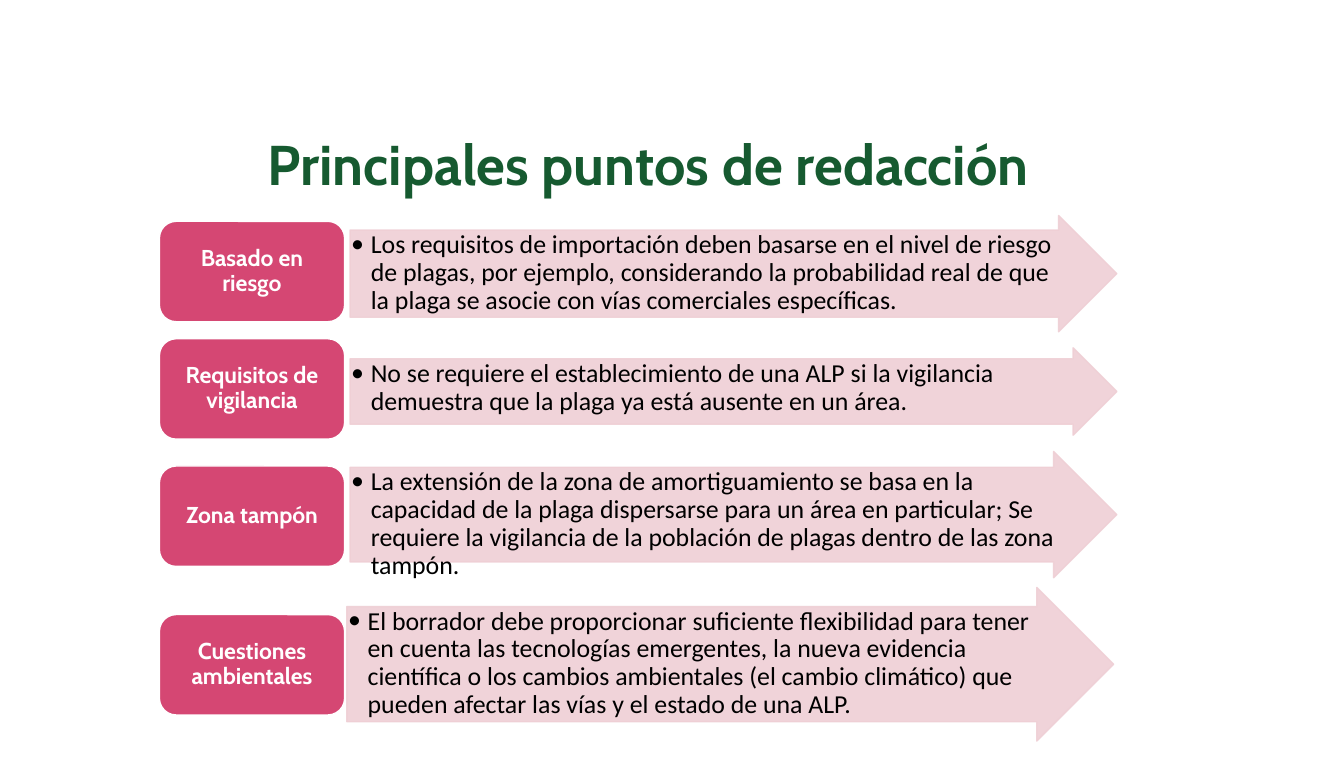
from dataclasses import dataclass

from lxml import etree
from pptx import Presentation
from pptx.dml.color import RGBColor
from pptx.enum import shapes, text
from pptx.oxml import ns
from pptx.util import Pt

GREEN, PINK, PALE_PINK = "165A30", "D54773", "EFCFD5"
WHITE, BLACK = "FFFFFF", "000000"
LABEL_LEFT, LABEL_WIDTH, LABEL_HEIGHT = 111, 129, 70
ARROW_WIDTH = 534
INDENT = 13.7


@dataclass
class DraftingPoint:
    label: str
    label_top: float
    detail: str
    arrow_left: float
    arrow_top: float
    arrow_height: float


POINTS = [
    DraftingPoint(
        "Basado en riesgo", 154.2,
        "Los requisitos de importación deben basarse en el nivel de riesgo de plagas, "
        "por ejemplo, considerando la probabilidad real de que la plaga se asocie con "
        "vías comerciales específicas.",
        243.8, 150.2, 81),
    DraftingPoint(
        "Requisitos de vigilancia", 236,
        "No se requiere el establecimiento de una ALP si la vigilancia demuestra que "
        "la plaga ya está ausente en un área.",
        243.8, 242.4, 60.8),
    DraftingPoint(
        "Zona tampón", 324.7,
        "La extensión de la zona de amortiguamiento se basa en la capacidad de la plaga "
        "dispersarse para un área en particular; Se requiere la vigilancia de la "
        "población de plagas dentro de las zona tampón.",
        243.8, 314.6, 88),
    DraftingPoint(
        "Cuestiones ambientales", 428.2,
        "El borrador debe proporcionar suficiente flexibilidad para tener en cuenta las "
        "tecnologías emergentes, la nueva evidencia científica o los cambios ambientales "
        "(el cambio climático) que pueden afectar las vías y el estado de una ALP.",
        241.6, 409.3, 107),
]


def set_color(color_format, value: str) -> None:
    color_format.rgb = RGBColor.from_string(value)


def set_font(paragraph, name: str, size: float, color: str, bold: bool = False) -> None:
    font = paragraph.font
    font.name, font.size, font.bold = name, Pt(size), bold
    set_color(font.color, color)


def add_box(slide, preset, left: float, top: float, width: float, height: float,
            fill: str, line: str):
    shape = slide.shapes.add_shape(preset, Pt(left), Pt(top), Pt(width), Pt(height))
    shape.shadow.inherit = False
    shape.fill.solid()
    set_color(shape.fill.fore_color, fill)
    set_color(shape.line.color, line)
    shape.line.width = Pt(1)
    return shape


def set_text(shape, wording: str, anchor, alignment, insets: tuple):
    """Fill the shape with one paragraph; insets are horizontal, vertical."""
    frame = shape.text_frame
    frame.word_wrap = True
    frame.vertical_anchor = anchor
    frame.margin_left = frame.margin_right = Pt(insets[0])
    frame.margin_top = frame.margin_bottom = Pt(insets[1])
    paragraph = frame.paragraphs[0]
    paragraph.text = wording
    paragraph.alignment = alignment
    paragraph.line_spacing = 0.9
    return paragraph


def add_bullet(paragraph, typeface: str) -> None:
    properties = paragraph._p.get_or_add_pPr()
    properties.set("marL", str(Pt(INDENT)))
    properties.set("indent", str(-Pt(INDENT)))
    etree.SubElement(properties, ns.qn("a:buFont")).set("typeface", typeface)
    etree.SubElement(properties, ns.qn("a:buChar")).set("char", "•")


def make_translucent(shape, percent: int) -> None:
    for color in shape._element.spPr.iter(ns.qn("a:srgbClr")):
        etree.SubElement(color, ns.qn("a:alpha")).set("val", str(percent * 1000))


def add_arrow(slide, point: DraftingPoint) -> None:
    arrow = add_box(slide, shapes.MSO_SHAPE.RIGHT_ARROW, point.arrow_left, point.arrow_top,
                    ARROW_WIDTH, point.arrow_height, PALE_PINK, PALE_PINK)
    arrow.adjustments[0], arrow.adjustments[1] = 0.75, 0.5
    make_translucent(arrow, 90)
    paragraph = set_text(arrow, point.detail, text.MSO_ANCHOR.TOP, text.PP_ALIGN.LEFT,
                         (0.8, 0.8))
    add_bullet(paragraph, "Calibri")
    set_font(paragraph, "Calibri", 18, BLACK)


def add_label(slide, point: DraftingPoint) -> None:
    label = add_box(slide, shapes.MSO_SHAPE.ROUNDED_RECTANGLE, LABEL_LEFT, point.label_top,
                    LABEL_WIDTH, LABEL_HEIGHT, PINK, WHITE)
    paragraph = set_text(label, point.label, text.MSO_ANCHOR.MIDDLE, text.PP_ALIGN.CENTER,
                         (4.8, 2.4))
    set_font(paragraph, "Cabin", 16, WHITE, bold=True)


def add_title(slide, wording: str) -> None:
    title = slide.shapes.title
    title.left, title.top, title.width, title.height = map(Pt, (24.3, 86.6, 854, 88))
    title.text_frame.vertical_anchor = text.MSO_ANCHOR.TOP
    paragraph = title.text_frame.paragraphs[0]
    paragraph.text = wording
    paragraph.alignment = text.PP_ALIGN.CENTER
    set_font(paragraph, "Cabin", 39, GREEN, bold=True)


def main() -> None:
    presentation = Presentation()
    presentation.slide_width, presentation.slide_height = Pt(936), Pt(540)
    slide = presentation.slides.add_slide(presentation.slide_layouts[5])
    add_title(slide, "Principales puntos de redacción")
    for point in POINTS:
        add_arrow(slide, point)
        add_label(slide, point)
    presentation.save("out.pptx")


if __name__ == "__main__":
    main()
